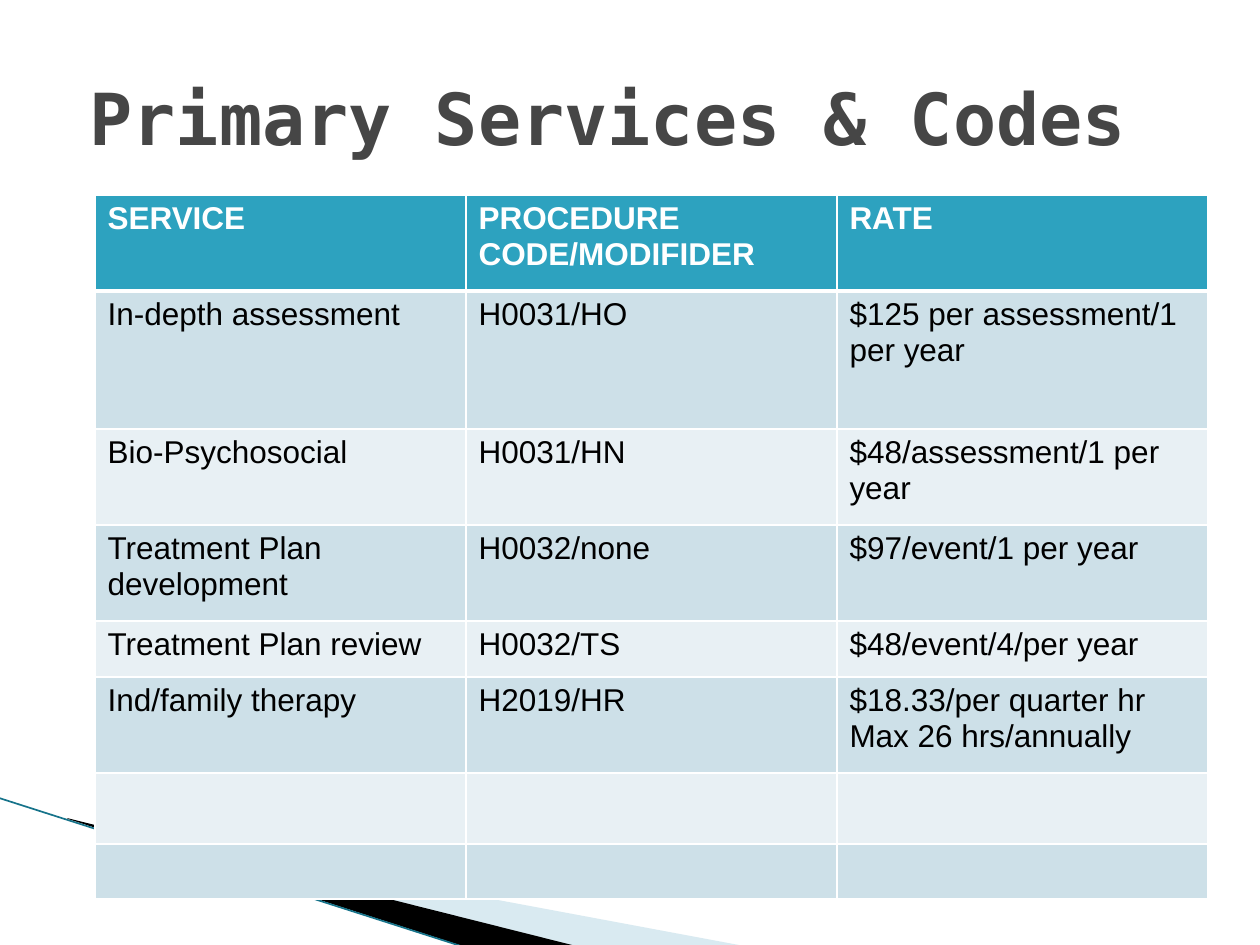
"""Build the Primary Services & Codes slide with its rate table."""
from dataclasses import dataclass

from lxml import etree
from pptx import Presentation
from pptx import util as u
from pptx.dml.color import RGBColor
from pptx.enum import shapes, text
from pptx.oxml.ns import qn

PX = 914400 / 126


@dataclass(frozen=True)
class Theme:
    title: str = "464646"
    header: str = "2DA2BF"
    bands: tuple[str, str] = ("CDE0E8", "E8F0F4")
    white: str = "FFFFFF"
    black: str = "000000"
    pale: str = "A0CBDC"
    edge: str = "16738A"
    title_font: str = "DejaVu Sans Mono"
    body_font: str = "Arial"
    title_size: int = 41
    body_size: int = 18


@dataclass(frozen=True)
class Wedge:
    points: tuple[tuple[int, int], ...]
    color: str
    alpha: int = 100


@dataclass(frozen=True)
class Row:
    height: int
    texts: tuple[str, str, str] = ("", "", "")


T = Theme()
WEDGES = (
    Wedge(((69, 820), (744, 946), (575, 946), (69, 819)), T.pale, 40),
    Wedge(((67, 818), (576, 946), (469, 948), (68, 819)), T.black),
)
ROWS = (
    Row(96, ("SERVICE", "PROCEDURE CODE/MODIFIDER", "RATE")),
    Row(138, ("In-depth assessment", "H0031/HO", "$125 per assessment/1 per year")),
    Row(96, ("Bio-Psychosocial", "H0031/HN", "$48/assessment/1 per year")),
    Row(96, ("Treatment Plan development", "H0032/none", "$97/event/1 per year")),
    Row(56, ("Treatment Plan review", "H0032/TS", "$48/event/4/per year")),
    Row(96, ("Ind/family therapy", "H2019/HR", "$18.33/per quarter hr Max 26 hrs/annually")),
    Row(71),
    Row(55),
)


def px(n: int) -> u.Emu:
    return u.Emu(round(n * PX))


def rgb(color: str) -> RGBColor:
    return RGBColor.from_string(color)


def write(tf, content: str, *, font: str, size: int, color: str,
          bold: bool = False, align=text.PP_ALIGN.LEFT) -> None:
    p = tf.paragraphs[0]
    p.alignment = align
    p.font.size = u.Pt(size)
    if content:
        r = p.add_run()
        r.text = content
        r.font.name = font
        r.font.size = u.Pt(size)
        r.font.bold = bold
        r.font.color.rgb = rgb(color)


def draw_wedge(s, wedge: Wedge) -> None:
    start, *rest = wedge.points
    builder = s.shapes.build_freeform(*start, scale=PX)
    builder.add_line_segments(rest, close=True)
    sp = builder.convert_to_shape()
    sp.shadow.inherit = False
    sp.line.fill.background()
    sp.fill.solid()
    sp.fill.fore_color.rgb = rgb(wedge.color)
    if wedge.alpha < 100:
        color = sp.fill._xPr.find(".//" + qn("a:srgbClr"))
        etree.SubElement(color, qn("a:alpha"), val=str(wedge.alpha * 1000))


def draw_edge(s) -> None:
    line = s.shapes.add_connector(
        shapes.MSO_CONNECTOR.STRAIGHT, px(-1), px(798), px(467), px(948))
    line.line.color.rgb = rgb(T.edge)
    line.line.width = u.Pt(0.95)
    etree.SubElement(line._element.spPr, qn("a:effectLst"))


def draw_title(s) -> None:
    tf = s.shapes.add_textbox(px(63), px(38), px(1134), px(158)).text_frame
    tf.word_wrap = True
    tf.vertical_anchor = text.MSO_ANCHOR.MIDDLE
    write(tf, "Primary Services & Codes ", font=T.title_font, size=T.title_size,
          color=T.title, bold=True, align=text.PP_ALIGN.CENTER)


def set_borders(cell, top: int, bottom: int) -> None:
    tc_pr = cell._tc.get_or_add_tcPr()
    widths = {"lnL": 1, "lnR": 1, "lnT": top, "lnB": bottom}
    for i, (side, width) in enumerate(widths.items()):
        ln = etree.Element(qn(f"a:{side}"), w=str(u.Pt(width)))
        fill = etree.SubElement(ln, qn("a:solidFill"))
        etree.SubElement(fill, qn("a:srgbClr"), val=T.white)
        tc_pr.insert(i, ln)


def draw_table(s, rows: tuple[Row, ...]) -> None:
    height = sum(row.height for row in rows)
    table = s.shapes.add_table(
        len(rows), 3, px(95), px(195), px(1113), px(height)).table
    for column in table.columns:
        column.width = px(371)
    for i, row in enumerate(rows):
        header = i == 0
        table.rows[i].height = px(row.height)
        for cell, content in zip(table.rows[i].cells, row.texts):
            cell.fill.solid()
            cell.fill.fore_color.rgb = rgb(T.header if header else T.bands[(i - 1) % 2])
            set_borders(cell, top=3 if i == 1 else 1, bottom=3 if header else 1)
            write(cell.text_frame, content, font=T.body_font, size=T.body_size,
                  color=T.white if header else T.black, bold=header)


def main() -> None:
    prs = Presentation()
    prs.slide_width, prs.slide_height = u.Inches(10), u.Inches(7.5)
    s = prs.slides.add_slide(prs.slide_layouts[6])
    for wedge in WEDGES:
        draw_wedge(s, wedge)
    draw_edge(s)
    draw_title(s)
    draw_table(s, ROWS)
    prs.save("out.pptx")


if __name__ == "__main__":
    main()
